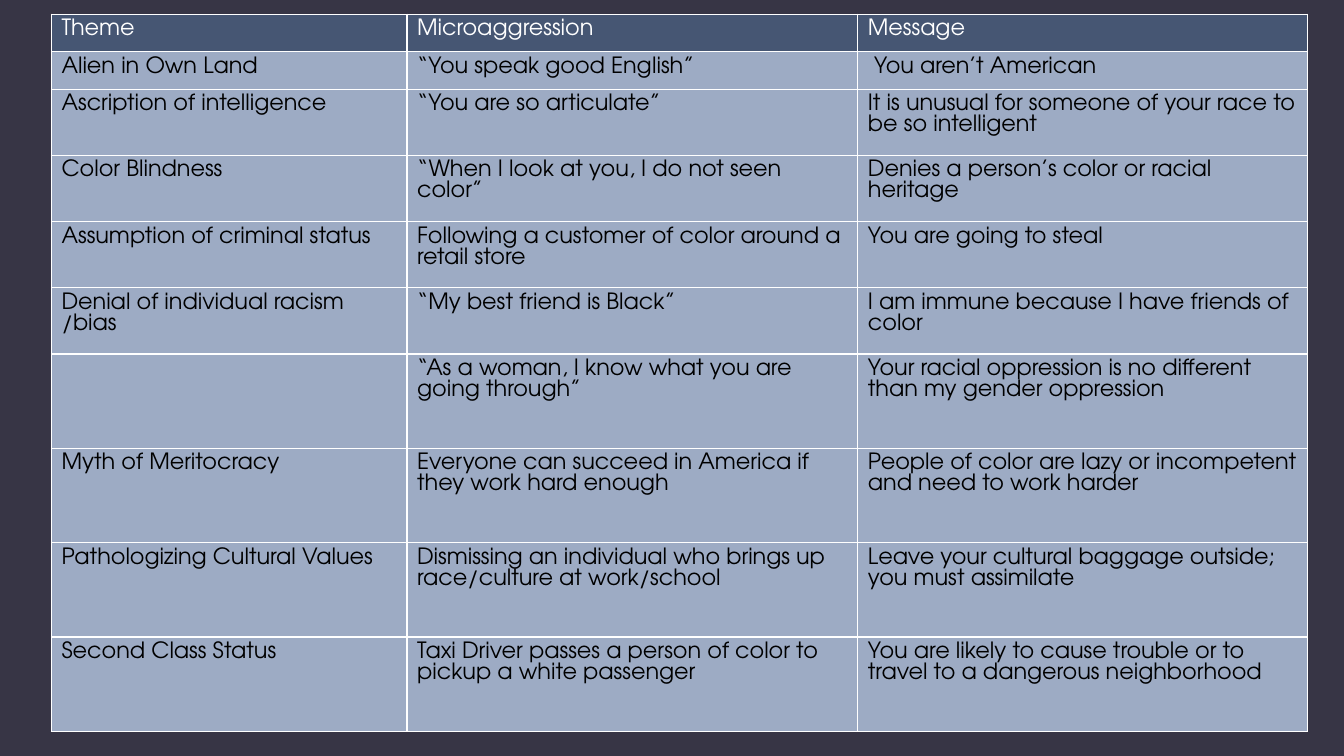
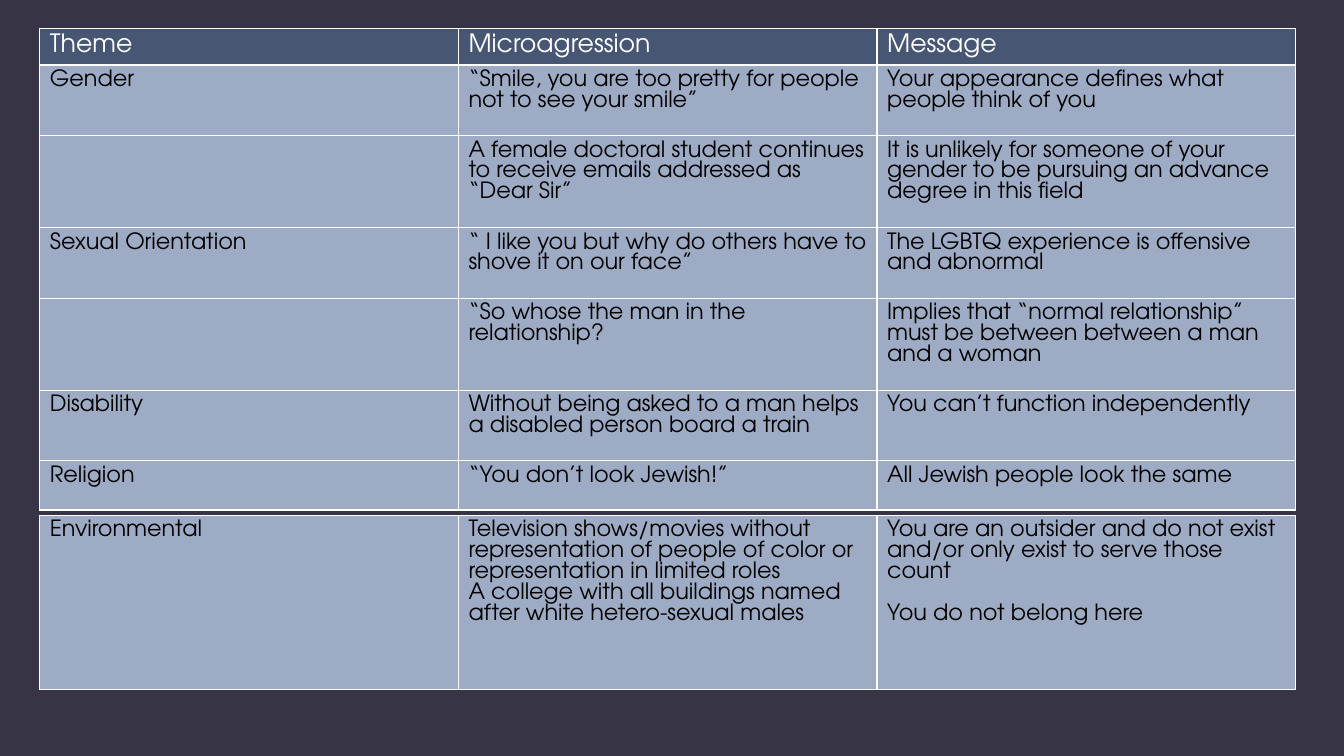
from lxml.etree import SubElement
from pptx import Presentation
from pptx.dml.color import RGBColor
from pptx.oxml.ns import qn
from pptx.util import Pt

FONT = "TeX Gyre Adventor"
BACKGROUND, HEADER, BODY = "373545", "465673", "9DABC4"
WHITE, BLACK = "FFFFFF", "000000"
BODY_SIZE = 16
BORDER_WIDTH = 1
PARAGRAPH_GAP = 15

RACE_ROWS = [
    ("Theme", "Microaggression", "Message"),
    ("Alien in Own Land", "“You speak good English”", " You aren’t American"),
    ("Ascription of intelligence", "“You are so articulate”",
     "It is unusual for someone of your race to be so intelligent"),
    ("Color Blindness", "“When I look at you, I do not seen color”",
     "Denies a person’s color or racial heritage"),
    ("Assumption of criminal status",
     "Following a customer of color around a retail store",
     "You are going to steal"),
    ("Denial of individual racism /bias", "“My best friend is Black”",
     "I am immune because I have friends of color"),
    ("", "“As a woman, I know what you are going through”",
     "Your racial oppression is no different than my gender oppression"),
    ("Myth of Meritocracy",
     "Everyone can succeed in America if they work hard enough",
     "People of color are lazy or incompetent and need to work harder"),
    ("Pathologizing Cultural Values",
     "Dismissing an individual who brings up race/culture at work/school",
     "Leave your cultural baggage outside; you must assimilate"),
    ("Second Class Status",
     "Taxi Driver passes a person of color to pickup a white passenger",
     "You are likely to cause trouble or to travel to a dangerous neighborhood"),
]

IDENTITY_ROWS = [
    ("Theme", "Microagression", "Message"),
    ("Gender", "“Smile, you are too pretty for people not to see your smile”",
     "Your appearance defines what people think of you"),
    ("",
     "A female doctoral student continues to receive emails addressed as “Dear Sir”",
     "It is unlikely for someone of your gender to be pursuing an advance degree "
     "in this field"),
    ("Sexual Orientation",
     "“ I like you but why do others have to shove it on our face”",
     "The LGBTQ experience is offensive and abnormal"),
    ("", "“So whose the man in the relationship?",
     "Implies that “normal relationship” must be between between a man and a woman"),
    ("Disability",
     "Without being asked to a man helps a disabled person board a train",
     "You can’t function independently"),
    ("Religion", "“You don’t look Jewish!”", "All Jewish people look the same"),
]

ENVIRONMENT_ROWS = [
    ("Environmental",
     "Television shows/movies without representation of people of color or "
     "representation in limited roles\n"
     "A college with all buildings named after white hetero-sexual males",
     "You are an outsider and do not exist and/or only exist to serve those count\n"
     "You do not belong here"),
]

RACE_COLUMNS = [254, 322, 321.3]
IDENTITY_COLUMNS = [299] * 3

# One list per slide, one dict per table; header_size is None without a header.
SLIDES = [
    [dict(rows=RACE_ROWS, left=36.8, top=10.2, columns=RACE_COLUMNS,
          heights=[26.8] * 2 + [47.3] * 4 + [67.4] * 4, header_size=16)],
    [dict(rows=IDENTITY_ROWS, left=28.5, top=20.6, columns=IDENTITY_COLUMNS,
          heights=[25.9, 50.4, 65.7, 50.4, 65.7, 50.4, 35.3], header_size=18),
     dict(rows=ENVIRONMENT_ROWS, left=28.5, top=368.2, columns=IDENTITY_COLUMNS,
          heights=[124.6], header_size=None, spaced_column=2)],
]


def color(value):
    return RGBColor.from_string(value)


def add_borders(cell):
    properties = cell._tc.get_or_add_tcPr()
    for side in ("a:lnL", "a:lnR", "a:lnT", "a:lnB"):
        line = SubElement(properties, qn(side), w=str(Pt(BORDER_WIDTH)))
        fill = SubElement(line, qn("a:solidFill"))
        SubElement(fill, qn("a:srgbClr"), val=WHITE)


def write_cell(cell, text, size, text_color, fill, gap):
    add_borders(cell)
    cell.fill.solid()
    cell.fill.fore_color.rgb = color(fill)
    frame = cell.text_frame
    for index, line in enumerate(text.split("\n") if text else []):
        para = frame.add_paragraph() if index else frame.paragraphs[0]
        if index:
            para.space_before = Pt(gap)
        span = para.add_run()
        span.text = line
        span.font.name = FONT
        span.font.size = Pt(size)
        span.font.color.rgb = color(text_color)


def add_theme_table(page, rows, left, top, columns, heights, header_size,
                    spaced_column=None):
    """Add a table; paragraphs in spaced_column are set apart."""
    table = page.shapes.add_table(
        len(rows), len(columns), Pt(left), Pt(top),
        Pt(sum(columns)), Pt(sum(heights))).table
    table.first_row = table.horz_banding = False
    for column, width in zip(table.columns, columns):
        column.width = Pt(width)
    for row_index, (row, height) in enumerate(zip(rows, heights)):
        table.rows[row_index].height = Pt(height)
        if header_size and row_index == 0:
            style = header_size, WHITE, HEADER
        else:
            style = BODY_SIZE, BLACK, BODY
        for column_index, text in enumerate(row):
            gap = PARAGRAPH_GAP if column_index == spaced_column else 0
            write_cell(table.cell(row_index, column_index), text, *style, gap)


def main():
    deck = Presentation()
    deck.slide_width, deck.slide_height = Pt(960), Pt(540)
    background = deck.slide_master.background.fill
    background.solid()
    background.fore_color.rgb = color(BACKGROUND)
    for tables in SLIDES:
        page = deck.slides.add_slide(deck.slide_layouts[6])
        for table in tables:
            add_theme_table(page, **table)
    deck.save("out.pptx")


if __name__ == "__main__":
    main()
